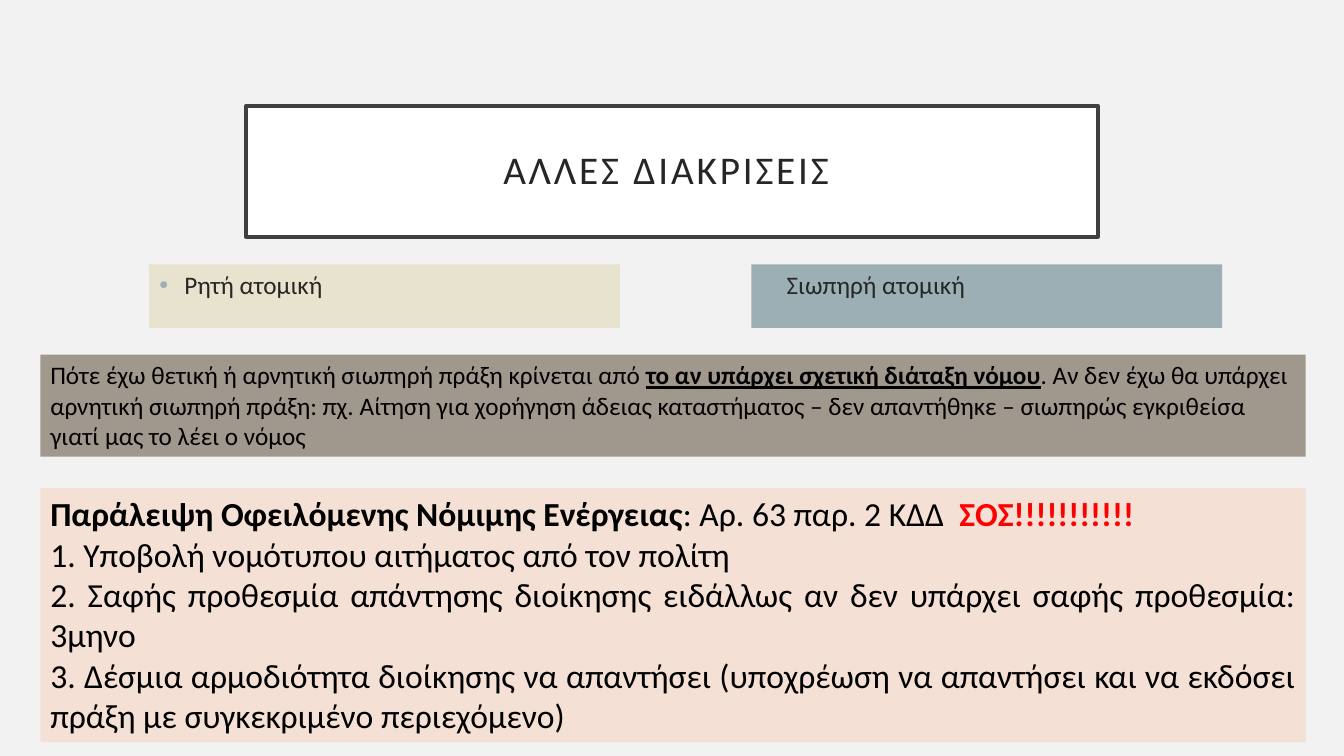
import dataclasses

import pptx
import pptx.dml.color
import pptx.enum.text
import pptx.oxml
import pptx.oxml.ns
import pptx.util
from lxml import etree

ALIGN = pptx.enum.text.PP_ALIGN
AUTOSIZE = pptx.enum.text.MSO_AUTO_SIZE
ANCHOR = pptx.enum.text.MSO_ANCHOR


@dataclasses.dataclass(frozen=True)
class Theme:
    font: str = "Calibri"
    background: str = "F2F2F2"
    white: str = "FFFFFF"
    frame: str = "404040"
    heading: str = "262626"
    text: str = "000000"
    alert: str = "FF0000"
    sand: str = "E8E3CE"
    blue: str = "9BAFB5"
    taupe: str = "A0988C"
    peach: str = "F5E0D5"
    title_size: int = 28
    large_size: int = 24
    body_size: int = 18


def rgb(value):
    return pptx.dml.color.RGBColor.from_string(value)


def add_run(p, text, *, font, size, color, bold=False, underline=False):
    r = p.add_run()
    r.text = text
    r.font.name = font
    r.font.size = pptx.util.Pt(size)
    r.font.color.rgb = rgb(color)
    r.font.bold = bold
    r.font.underline = underline
    return r


class SlideBuilder:
    """Holds the theme and slide; boxes are (left, top, width, height) in percent."""

    def __init__(self, prs, theme):
        self.prs = prs
        self.theme = theme
        self.s = prs.slides.add_slide(prs.slide_layouts.get_by_name("Two Content"))
        self.s.background.fill.solid()
        self.s.background.fill.fore_color.rgb = rgb(theme.background)

    def lengths(self, box):
        sides = (self.prs.slide_width, self.prs.slide_height) * 2
        return [round(side * share / 100) for side, share in zip(sides, box)]

    def placeholder(self, idx, box, fill, anchor):
        sp = self.s.placeholders[idx]
        sp.left, sp.top, sp.width, sp.height = self.lengths(box)
        sp.fill.solid()
        sp.fill.fore_color.rgb = rgb(fill)
        sp.text_frame.auto_size = AUTOSIZE.NONE
        sp.text_frame.vertical_anchor = anchor
        return sp

    def title(self, text, box):
        th = self.theme
        sp = self.placeholder(0, box, th.white, ANCHOR.MIDDLE)
        sp.line.color.rgb = rgb(th.frame)
        sp.line.width = pptx.util.Pt(2.5)
        tf = sp.text_frame
        tf.margin_left = tf.margin_right = pptx.util.Inches(0.2)
        tf.margin_top = tf.margin_bottom = pptx.util.Inches(0.2)
        p = tf.paragraphs[0]
        p.alignment = ALIGN.CENTER
        p.line_spacing = 0.9
        r = add_run(p, text, font=th.font, size=th.title_size, color=th.heading)
        rPr = r.font._element
        rPr.set("cap", "all")
        rPr.set("spc", "200")

    def bullet(self, idx, text, box, fill):
        th = self.theme
        sp = self.placeholder(idx, box, fill, ANCHOR.TOP)
        p = sp.text_frame.paragraphs[0]
        p.space_before = pptx.util.Pt(10)
        add_run(p, text, font=th.font, size=th.body_size, color=th.heading)
        pPr = p._p.get_or_add_pPr()
        indent = pptx.util.Inches(0.25)
        pPr.set("marL", str(indent))
        pPr.set("indent", str(-indent))
        qn = pptx.oxml.ns.qn
        color = etree.SubElement(pPr, qn("a:buClr"))
        etree.SubElement(color, qn("a:srgbClr"), val=th.blue)
        etree.SubElement(pPr, qn("a:buFont"), typeface="Arial")
        etree.SubElement(pPr, qn("a:buChar"), char="•")

    def panel(self, paragraphs, box, fill, size, align=ALIGN.LEFT):
        """Add a filled text box; each paragraph is a list of (text, format) runs."""
        th = self.theme
        sp = self.s.shapes.add_textbox(*self.lengths(box))
        sp.fill.solid()
        sp.fill.fore_color.rgb = rgb(fill)
        tf = sp.text_frame
        tf.word_wrap = True
        tf.auto_size = AUTOSIZE.SHAPE_TO_FIT_TEXT
        for i, runs in enumerate(paragraphs):
            p = tf.add_paragraph() if i else tf.paragraphs[0]
            p.alignment = align
            for text, style in runs:
                base = {"font": th.font, "size": size, "color": th.text}
                add_run(p, text, **(base | style))


def main():
    prs = pptx.Presentation()
    prs.slide_width = pptx.util.Inches(13.33)
    prs.slide_height = pptx.util.Inches(7.5)
    th = Theme()
    slide = SlideBuilder(prs, th)

    slide.title("ΆΛΛΕΣ ΔΙΑΚΡΙΣΕΙΣ ", (18.3, 14, 63.4, 17.33))

    kinds = [("Ρητή ατομική", th.sand), ("Σιωπηρή ατομική", th.blue)]
    for i, (text, fill) in enumerate(kinds):
        slide.bullet(i + 1, text, (11.1 + 44.8 * i, 34.97, 35.03, 8.4), fill)

    left, width = 3, 94.15
    slide.panel(
        [[
            ("Πότε έχω θετική ή αρνητική σιωπηρή πράξη κρίνεται από ", {}),
            ("το αν υπάρχει σχετική διάταξη νόμου", {"bold": True, "underline": True}),
            (". Αν δεν έχω θα υπάρχει αρνητική σιωπηρή πράξη: πχ. Αίτηση για "
             "χορήγηση άδειας καταστήματος – δεν απαντήθηκε – σιωπηρώς "
             "εγκριθείσα γιατί μας το λέει ο νόμος", {}),
        ]],
        (left, 46.93, width, 13.47), th.taupe, th.body_size)

    conditions = [
        "1. Υποβολή νομότυπου αιτήματος από τον πολίτη",
        "2. Σαφής προθεσμία απάντησης διοίκησης ειδάλλως αν δεν υπάρχει "
        "σαφής προθεσμία: 3μηνο",
        "3. Δέσμια αρμοδιότητα διοίκησης να απαντήσει (υποχρέωση να απαντήσει "
        "και να εκδόσει πράξη με συγκεκριμένο περιεχόμενο)",
    ]
    omission = [
        ("Παράλειψη Οφειλόμενης Νόμιμης Ενέργειας", {"bold": True}),
        (": Αρ. 63 παρ. 2 ΚΔΔ  ", {}),
        ("ΣΟΣ!!!!!!!!!!!", {"bold": True, "color": th.alert}),
    ]
    slide.panel(
        [omission] + [[(text, {})] for text in conditions],
        (left, 64.57, width, 33.6), th.peach, th.large_size, ALIGN.JUSTIFY)

    prs.save("out.pptx")


if __name__ == "__main__":
    main()
